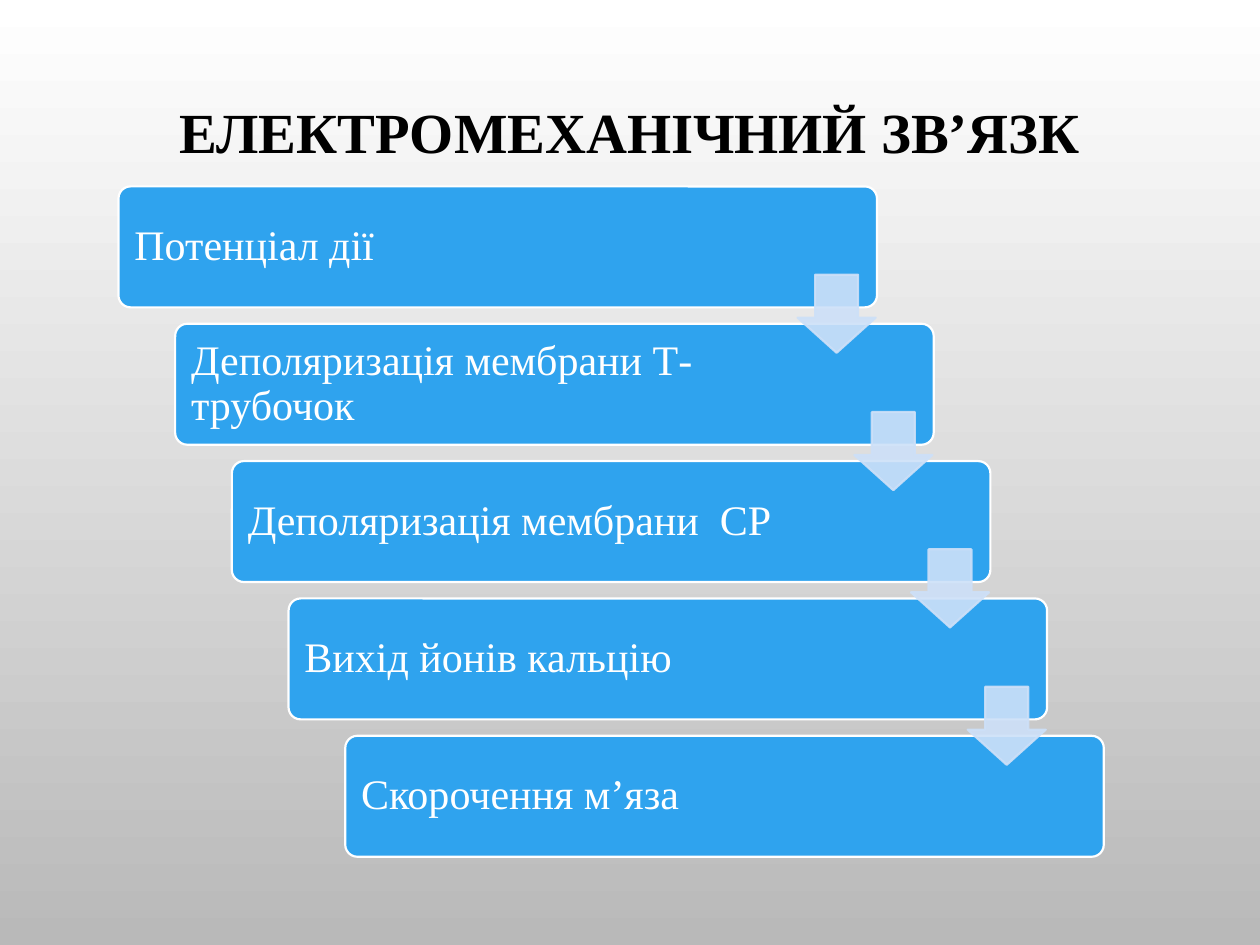
from lxml import etree
from pptx import Presentation
from pptx import util as u
from pptx.dml.color import RGBColor
from pptx.enum import shapes, text
from pptx.oxml.ns import qn

HEADING = "ЕЛЕКТРОМЕХАНІЧНИЙ ЗВ’ЯЗК"
STEPS = [
    "Потенціал дії",
    "Деполяризація мембрани Т-трубочок",
    "Деполяризація мембрани  СР",
    "Вихід йонів кальцію",
    "Скорочення м’яза",
]
COLORS = {
    "top": "FFFFFF",
    "bottom": "B9B9B9",
    "heading": "000000",
    "step": "2FA3EE",
    "white": "FFFFFF",
    "arrow": "CDE0F8",
}
FONT = "Times New Roman"
LEFT, TOP = 0.94, 1.48
STEP_WIDTH, STEP_HEIGHT = 6.02, 0.96
SHIFT_X, SHIFT_Y = 0.45, 1.09
ARROW_LEFT, ARROW_TOP, ARROW_SIZE = 6.33, 2.18, 0.62


def color(name):
    return RGBColor.from_string(COLORS[name])


def write(shape, words, *, size, ink, align, bold=False, insets=(0.1, 0.05, 0.1, 0.05)):
    frame = shape.text_frame
    frame.word_wrap = True
    frame.auto_size = text.MSO_AUTO_SIZE.NONE
    frame.vertical_anchor = text.MSO_ANCHOR.MIDDLE
    (frame.margin_left, frame.margin_top,
     frame.margin_right, frame.margin_bottom) = map(u.Inches, insets)
    line = frame.paragraphs[0]
    line.alignment = align
    line.line_spacing = 0.9
    line.space_before = u.Pt(0)
    run = line.add_run()
    run.text = words
    run.font.name = FONT
    run.font.size = u.Pt(size)
    run.font.bold = bold
    run.font.color.rgb = color(ink)


def add_block(slide, preset, place, adjustments, fill, outline):
    block = slide.shapes.add_shape(preset, *map(u.Inches, place))
    for index, value in enumerate(adjustments):
        block.adjustments[index] = value
    block.shadow.inherit = False
    block.fill.solid()
    block.fill.fore_color.rgb = color(fill)
    block.line.color.rgb = color(outline)
    block.line.width = u.Pt(1.25)
    return block


def set_opacity(shape, percent):
    for tint in shape._element.spPr.iter(qn("a:srgbClr")):
        etree.SubElement(tint, qn("a:alpha"), val=str(percent * 1000))


def main():
    deck = Presentation()
    deck.slide_width, deck.slide_height = u.Inches(10), u.Inches(7.5)
    slide = deck.slides.add_slide(deck.slide_layouts[5])

    backdrop = slide.background.fill
    backdrop.gradient()
    backdrop.gradient_angle = 270
    for stop, name in zip(backdrop.gradient_stops, ("top", "bottom")):
        stop.color.rgb = color(name)

    heading = slide.shapes.title
    heading.left, heading.top = u.Inches(0.75), u.Inches(0.68)
    heading.width, heading.height = u.Inches(8.5), u.Inches(0.78)
    write(heading, HEADING, size=32.4, ink="heading", bold=True,
          align=text.PP_ALIGN.CENTER)

    for index, words in enumerate(STEPS):
        place = (LEFT + index * SHIFT_X, TOP + index * SHIFT_Y,
                 STEP_WIDTH, STEP_HEIGHT)
        step = add_block(slide, shapes.MSO_SHAPE.ROUNDED_RECTANGLE, place,
                         [0.1], "step", "white")
        write(step, words, size=24, ink="white", align=text.PP_ALIGN.LEFT,
              insets=(0.1, 0.1, 1.17, 0.1))

    for index in range(len(STEPS) - 1):
        place = (ARROW_LEFT + index * SHIFT_X, ARROW_TOP + index * SHIFT_Y,
                 ARROW_SIZE, ARROW_SIZE)
        arrow = add_block(slide, shapes.MSO_SHAPE.DOWN_ARROW, place,
                          [0.55, 0.45], "arrow", "arrow")
        set_opacity(arrow, 90)

    deck.save("out.pptx")


if __name__ == "__main__":
    main()
